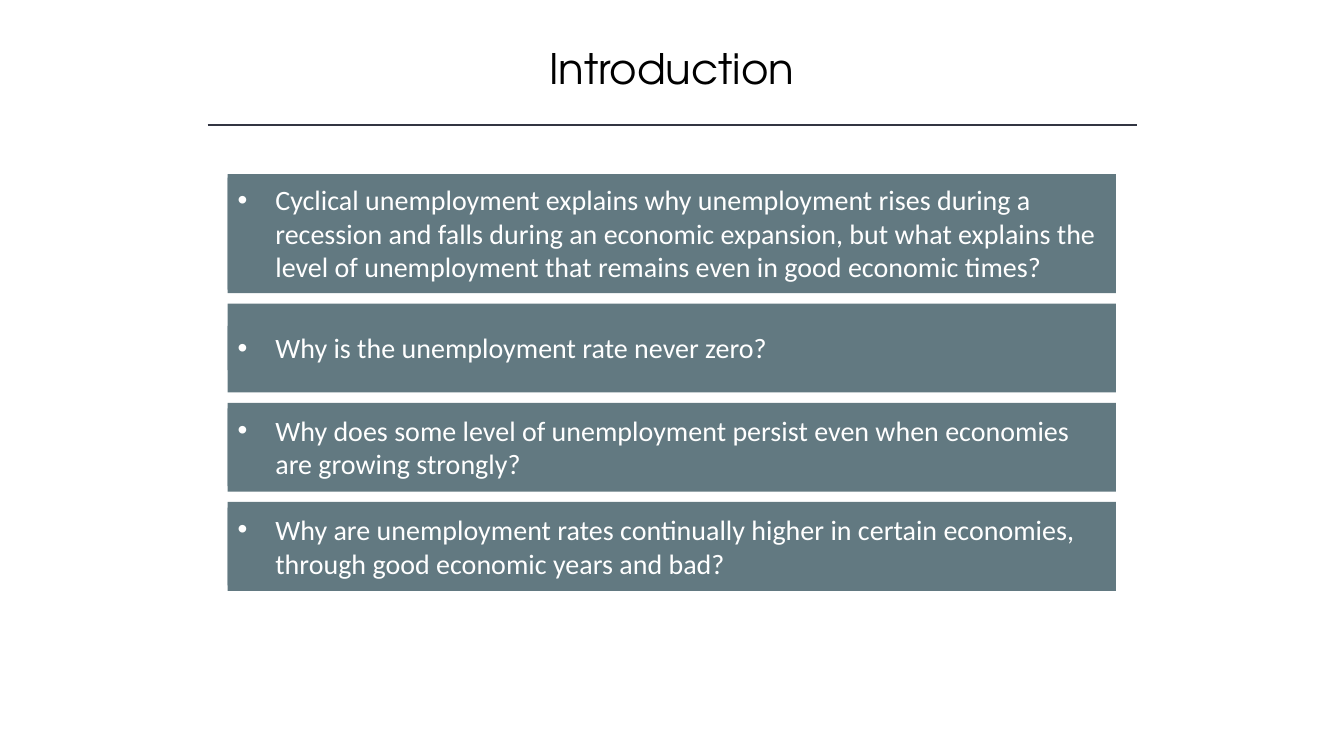
from lxml import etree
from pptx import Presentation
from pptx import util as u
from pptx.dml.color import RGBColor
from pptx.enum import shapes, text
from pptx.oxml.ns import qn

BLACK = RGBColor(0x00, 0x00, 0x00)
WHITE = RGBColor(0xFF, 0xFF, 0xFF)
SLATE = RGBColor(0x62, 0x79, 0x81)
INK = RGBColor(0x32, 0x35, 0x42)

CARD_LEFT, CARD_WIDTH, CARD_TOP, CARD_GAP = 5.74, 22.38, 4.39, 0.26
CARDS = [
    (3.0, 2.82, 22.38,
     "Cyclical unemployment explains why unemployment rises during a recession "
     "and falls during an economic expansion, but what explains the level of "
     "unemployment that remains even in good economic times?"),
    (2.24, 1.12, 21.69, "Why is the unemployment rate never zero?"),
    (2.24, 1.96, 22.38,
     "Why does some level of unemployment persist even when economies are "
     "growing strongly?"),
    (2.24, 1.96, 22.38,
     "Why are unemployment rates continually higher in certain economies, "
     "through good economic years and bad?"),
]


class SlideBuilder:
    title_font = "TeX Gyre Adventor"
    body_font = "Calibri"

    def __init__(self, slide):
        self.slide = slide

    def set_font(self, para, name, size, color):
        para.font.name = name
        para.font.size = u.Pt(size)
        para.font.color.rgb = color

    def title(self, words, left, top, width, height):
        box = self.slide.shapes.title
        box.left, box.top = u.Cm(left), u.Cm(top)
        box.width, box.height = u.Cm(width), u.Cm(height)
        frame = box.text_frame
        frame.text = words
        frame.auto_size = text.MSO_AUTO_SIZE.SHAPE_TO_FIT_TEXT
        frame.vertical_anchor = text.MSO_ANCHOR.MIDDLE
        para = frame.paragraphs[0]
        para.alignment = text.PP_ALIGN.CENTER
        self.set_font(para, self.title_font, 30, BLACK)

    def rule(self, left, right, top):
        line = self.slide.shapes.add_connector(
            shapes.MSO_CONNECTOR.STRAIGHT,
            u.Cm(left), u.Cm(top), u.Cm(right), u.Cm(top))
        line.line.color.rgb = INK
        line.line.width = u.Pt(1)
        etree.SubElement(line._element.spPr, qn("a:effectLst"))

    def block(self, group, left, top, width, height):
        box = group.shapes.add_shape(
            shapes.MSO_SHAPE.RECTANGLE,
            u.Cm(left), u.Cm(top), u.Cm(width), u.Cm(height))
        box.shadow.inherit = False
        box.fill.solid()
        box.fill.fore_color.rgb = SLATE
        box.line.fill.background()
        return box

    def bullet(self, para):
        props = para._p.get_or_add_pPr()
        props.set("marL", str(u.Cm(0.95)))
        props.set("indent", str(-u.Cm(0.95)))
        etree.SubElement(props, qn("a:buFont"), typeface="Arial")
        etree.SubElement(props, qn("a:buChar"), char="•")

    def card(self, top, height, text_height, text_width, words):
        group = self.slide.shapes.add_group_shape()
        self.block(group, CARD_LEFT, top, CARD_WIDTH, height)
        text_top = top + (height - text_height) / 2
        box = self.block(group, CARD_LEFT, text_top, text_width, text_height)
        frame = box.text_frame
        frame.word_wrap = True
        frame.auto_size = text.MSO_AUTO_SIZE.SHAPE_TO_FIT_TEXT
        frame.vertical_anchor = text.MSO_ANCHOR.TOP
        frame.text = words
        para = frame.paragraphs[0]
        para.alignment = text.PP_ALIGN.LEFT
        self.bullet(para)
        self.set_font(para, self.body_font, 20, WHITE)


def main():
    deck = Presentation()
    deck.slide_width, deck.slide_height = u.Cm(33.87), u.Cm(19.05)
    page = SlideBuilder(deck.slides.add_slide(deck.slide_layouts[5]))
    page.title("Introduction", 4.23, 0.94, 25.4, 1.54)
    page.rule(5.23, 28.65, 3.15)
    top = CARD_TOP
    for height, text_height, text_width, words in CARDS:
        page.card(top, height, text_height, text_width, words)
        top += height + CARD_GAP
    deck.save("out.pptx")


if __name__ == "__main__":
    main()
